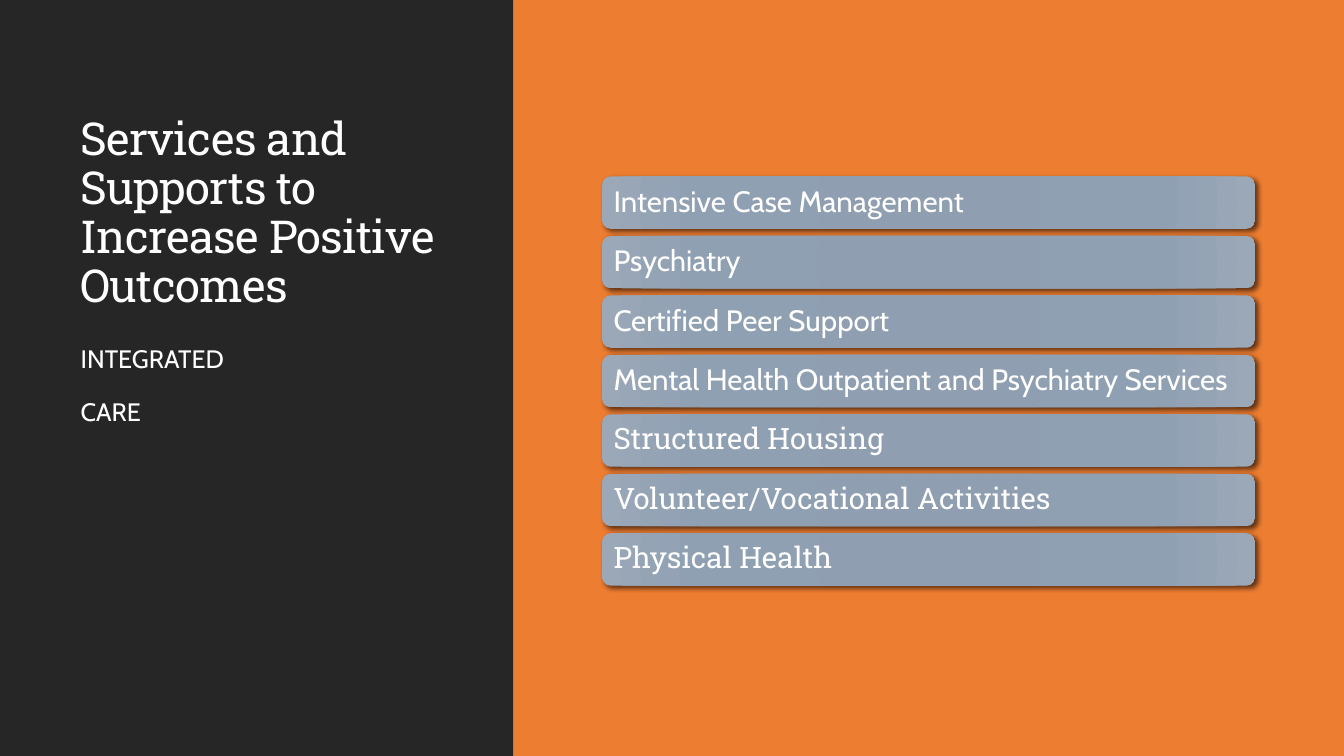
from lxml import etree
from pptx import Presentation
from pptx.dml.color import RGBColor
from pptx.enum.shapes import MSO_SHAPE
from pptx.enum.text import MSO_ANCHOR, MSO_AUTO_SIZE, PP_ALIGN
from pptx.oxml import parse_xml
from pptx.oxml.ns import qn
from pptx.util import Inches, Pt

SANS, SLAB = "Cabin", "Roboto Slab"
TITLE = "Services and Supports to Increase Positive Outcomes"
CARE_LINES = ["INTEGRATED", "CARE"]
SERVICES = [
    ("Intensive Case Management", SANS),
    ("Psychiatry", SANS),
    ("Certified Peer Support", SANS),
    ("Mental Health Outpatient and Psychiatry Services", SANS),
    ("Structured Housing", SLAB),
    ("Volunteer/Vocational Activities", SLAB),
    ("Physical Health\u00a0", SLAB),
]

ORANGE = RGBColor(0xED, 0x7D, 0x31)
CHARCOAL = RGBColor(0x26, 0x26, 0x26)
WHITE = RGBColor(0xFF, 0xFF, 0xFF)
BAR_STOPS = [
    (0, RGBColor(0x8D, 0x9C, 0xAE)),
    (34, RGBColor(0x8F, 0x9E, 0xB0)),
    (70, RGBColor(0x90, 0xA0, 0xB3)),
    (100, RGBColor(0x9A, 0xA8, 0xB8)),
]
LEFT, MIDDLE, BOTTOM = PP_ALIGN.LEFT, MSO_ANCHOR.MIDDLE, MSO_ANCHOR.BOTTOM
TOP, NO_FIT = MSO_ANCHOR.TOP, MSO_AUTO_SIZE.NONE
RECT, ROUNDED = MSO_SHAPE.RECTANGLE, MSO_SHAPE.ROUNDED_RECTANGLE

SLIDE_W, SLIDE_H, PANEL_W = 13.33, 7.5, 5.09
TEXT_X, TEXT_W = 0.7, 3.85
BAR_X, BAR_Y, BAR_W, BAR_H, BAR_PITCH = 5.97, 1.75, 6.48, 0.52, 0.59
DRAWING_NS = 'xmlns:a="http://schemas.openxmlformats.org/drawingml/2006/main"'


def place(shape, x, y, w, h):
    shape.left, shape.top = Inches(x), Inches(y)
    shape.width, shape.height = Inches(w), Inches(h)


def set_up_frame(frame, anchor):
    frame.word_wrap = True
    frame.auto_size = NO_FIT
    frame.vertical_anchor = anchor


def style(paragraph, font_name, size, line_spacing):
    paragraph.alignment = LEFT
    paragraph.line_spacing = line_spacing
    paragraph.font.name = font_name
    paragraph.font.size = Pt(size)
    paragraph.font.color.rgb = WHITE


def add_glow_and_shadow(bar):
    """Give the bar its radial gradient and soft drop shadow."""
    stops = "".join(
        f'<a:gs pos="{percent * 1000}"><a:srgbClr val="{color}"/></a:gs>'
        for percent, color in BAR_STOPS)
    gradient = parse_xml(
        f'<a:gradFill {DRAWING_NS} rotWithShape="1"><a:gsLst>{stops}</a:gsLst>'
        '<a:path path="circle"><a:fillToRect l="100000" t="100000" '
        'r="100000" b="100000"/></a:path></a:gradFill>')
    properties = bar.fill._xPr
    properties.find(qn("a:prstGeom")).addnext(gradient)
    bar.shadow.inherit = False
    shadow = parse_xml(
        f'<a:outerShdw {DRAWING_NS} blurRad="{Pt(3.5)}" dist="{Pt(2)}" '
        'dir="2700000" algn="tl" rotWithShape="0"><a:srgbClr val="000000">'
        '<a:alpha val="60000"/></a:srgbClr></a:outerShdw>')
    properties.find(qn("a:effectLst")).append(shadow)


def add_panel(slide):
    panel = slide.shapes.add_shape(
        RECT, 0, 0, Inches(PANEL_W), Inches(SLIDE_H))
    panel.fill.solid()
    panel.fill.fore_color.rgb = CHARCOAL
    panel.line.fill.background()
    panel.shadow.inherit = False
    slide.shapes._spTree.insert(2, panel._element)  # behind the placeholders


def fill_title(title):
    place(title, TEXT_X, 0.86, TEXT_W, 2.29)
    set_up_frame(title.text_frame, BOTTOM)
    title.text_frame.text = TITLE
    heading = title.text_frame.paragraphs[0]
    style(heading, SLAB, 32.4, 0.9)
    heading.runs[0].font._element.set("spc", "-50")


def fill_body(body):
    place(body, TEXT_X, 3.33, TEXT_W, 3.35)
    set_up_frame(body.text_frame, TOP)
    body.text_frame.text = "\n".join(CARE_LINES)
    for line in body.text_frame.paragraphs:
        style(line, SANS, 18, 1.1)
        line.space_before, line.space_after = Pt(12), Pt(2)
        properties = line._p.get_or_add_pPr()
        properties.set("marL", "0")
        properties.set("indent", "0")
        bullet = etree.Element(qn("a:buNone"))
        properties.find(qn("a:defRPr")).addprevious(bullet)


def add_service_bar(slide, row, service, font_name):
    bar = slide.shapes.add_shape(
        ROUNDED, Inches(BAR_X), Inches(BAR_Y + row * BAR_PITCH),
        Inches(BAR_W), Inches(BAR_H))
    bar.line.fill.background()
    add_glow_and_shadow(bar)
    frame = bar.text_frame
    set_up_frame(frame, MIDDLE)
    frame.margin_left = frame.margin_right = Inches(0.09)
    frame.margin_top = frame.margin_bottom = Inches(0.09)
    frame.text = service
    style(frame.paragraphs[0], font_name, 21, 0.9)


def main():
    deck = Presentation()
    deck.slide_width, deck.slide_height = Inches(SLIDE_W), Inches(SLIDE_H)
    slide = deck.slides.add_slide(deck.slide_layouts[1])
    slide.background.fill.solid()
    slide.background.fill.fore_color.rgb = ORANGE
    add_panel(slide)
    fill_title(slide.shapes.title)
    fill_body(slide.placeholders[1])
    for row, (service, font_name) in enumerate(SERVICES):
        add_service_bar(slide, row, service, font_name)
    deck.save("out.pptx")


if __name__ == "__main__":
    main()
